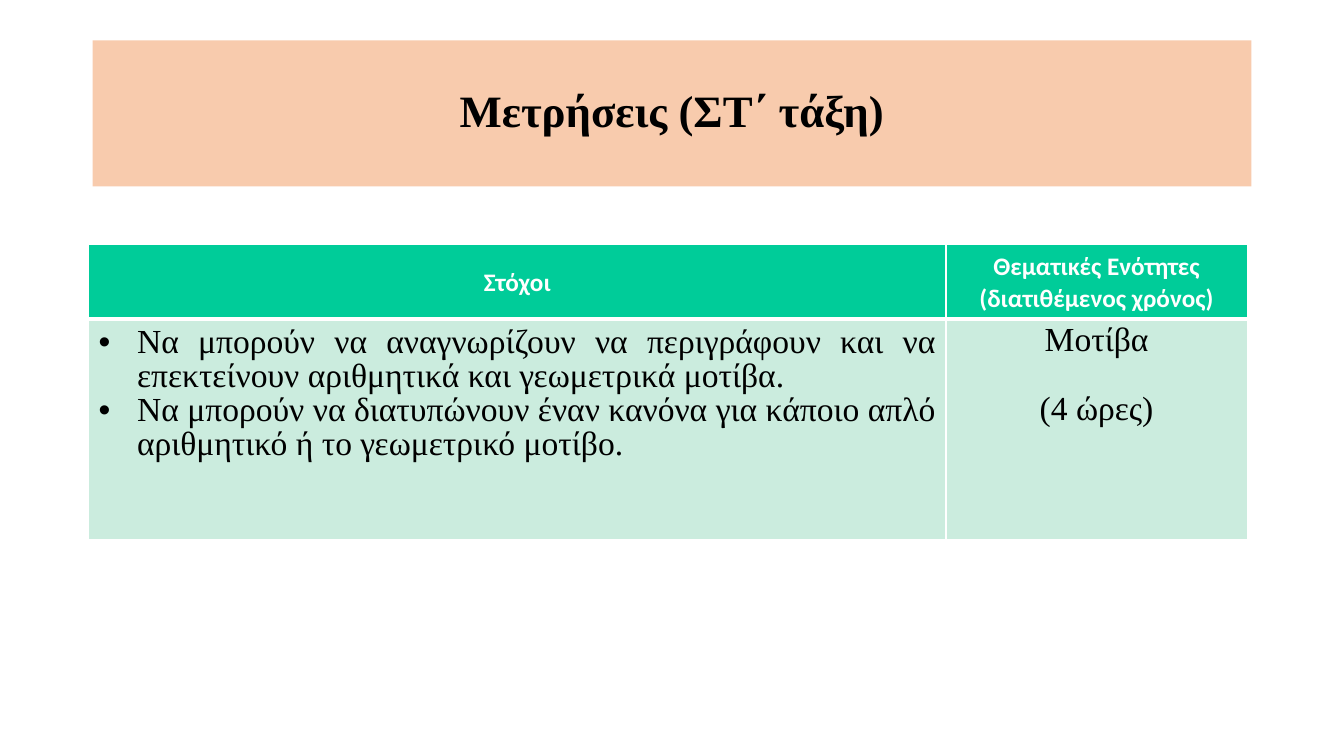
from lxml import etree
from pptx import Presentation
from pptx.dml.color import RGBColor
from pptx.enum.text import MSO_ANCHOR, MSO_AUTO_SIZE, PP_ALIGN
from pptx.oxml.ns import qn
from pptx.util import Emu, Pt

CENTER, JUSTIFY = PP_ALIGN.CENTER, PP_ALIGN.JUSTIFY
TOP, MIDDLE = MSO_ANCHOR.TOP, MSO_ANCHOR.MIDDLE
NO_AUTOFIT = MSO_AUTO_SIZE.NONE
SERIF, SANS = "Times New Roman", "Calibri"
BLACK, WHITE = "000000", "FFFFFF"
PEACH, GREEN, MINT = "F8CBAD", "00CC99", "CBECDE"
TITLE_ONLY = 5
THIN, THICK = 0.91, 2.95

GOALS = [
    "Να μπορούν να αναγνωρίζουν να περιγράφουν και να επεκτείνουν "
    "αριθμητικά και γεωμετρικά μοτίβα.",
    "Να μπορούν να διατυπώνουν έναν κανόνα για κάποιο απλό αριθμητικό "
    "ή το γεωμετρικό μοτίβο.",
]
HEADERS = [["Στόχοι"], ["Θεματικές Ενότητες", "(διατιθέμενος χρόνος)"]]
TOPIC = ["Μοτίβα", "(4 ώρες)"]


def px(n):
    """Length in EMU, at 100 px to the inch."""
    return Emu(n * 9144)


def color(value):
    return RGBColor.from_string(value)


def write(tf, lines, size=24, font=SERIF, fill=BLACK, bold=False,
          align=CENTER, spacing=0.92, gap=0, bullet=False):
    """Write one paragraph per line, with gap points between them."""
    for i, line in enumerate(lines):
        p = tf.paragraphs[0] if i == 0 else tf.add_paragraph()
        p.alignment = align
        p.line_spacing = spacing
        p.space_before = Pt(gap if i else 0)
        r = p.add_run()
        r.text = line
        r.font.size, r.font.name, r.font.bold = Pt(size), font, bold
        r.font.color.rgb = color(fill)
        if bullet:
            pPr = p._p.get_or_add_pPr()
            pPr.set("marL", str(px(38)))
            pPr.set("indent", str(-px(38)))
            etree.SubElement(pPr, qn("a:buFont"), typeface="Arial")
            etree.SubElement(pPr, qn("a:buChar"), char="•")


def style_cell(cell, fill, anchor, top, bottom, margin_top=5):
    """Set fill, anchor, margins and white borders of a cell."""
    tcPr = cell._tc.get_or_add_tcPr()
    for side, width in zip("LRTB", (THIN, THIN, top, bottom)):
        ln = etree.SubElement(tcPr, qn(f"a:ln{side}"), w=str(Pt(width)))
        solid = etree.SubElement(ln, qn("a:solidFill"))
        etree.SubElement(solid, qn("a:srgbClr"), val=WHITE)
    cell.fill.solid()
    cell.fill.fore_color.rgb = color(fill)
    cell.vertical_anchor = anchor
    cell.margin_left = cell.margin_right = px(10)
    cell.margin_top, cell.margin_bottom = px(margin_top), px(5)


def add_title(slide, x, y, w, h):
    sp = slide.shapes.title
    sp.left, sp.top, sp.width, sp.height = px(x), px(y), px(w), px(h)
    sp.fill.solid()
    sp.fill.fore_color.rgb = color(PEACH)
    tf = sp.text_frame
    tf.auto_size, tf.vertical_anchor = NO_AUTOFIT, MIDDLE
    write(tf, ["Μετρήσεις (ΣΤ΄ τάξη)"], size=32, bold=True, spacing=0.9)


def add_goals_table(slide, x, y, w, h):
    table = slide.shapes.add_table(2, 2, px(x), px(y), px(w), px(h)).table
    topic_w, header_h = 299, 73
    table.columns[0].width = px(w - topic_w)
    table.columns[1].width = px(topic_w)
    table.rows[0].height = px(header_h)
    table.rows[1].height = px(h - header_h)

    for col, lines in enumerate(HEADERS):
        cell = table.cell(0, col)
        style_cell(cell, GREEN, MIDDLE, THIN, THICK)
        write(cell.text_frame, lines, size=18, font=SANS, fill=WHITE,
              bold=True, spacing=1.04)

    goals, topic = table.cell(1, 0), table.cell(1, 1)
    style_cell(goals, MINT, TOP, THICK, THIN, margin_top=7)
    write(goals.text_frame, GOALS, align=JUSTIFY, bullet=True)
    style_cell(topic, MINT, TOP, THICK, THIN)
    write(topic.text_frame, TOPIC, gap=25)


def main():
    prs = Presentation()
    prs.slide_width, prs.slide_height = px(1334), px(750)
    slide = prs.slides.add_slide(prs.slide_layouts[TITLE_ONLY])
    add_title(slide, 92, 40, 1150, 145)
    add_goals_table(slide, 88, 243, 1150, 292)
    prs.save("out.pptx")


if __name__ == "__main__":
    main()
